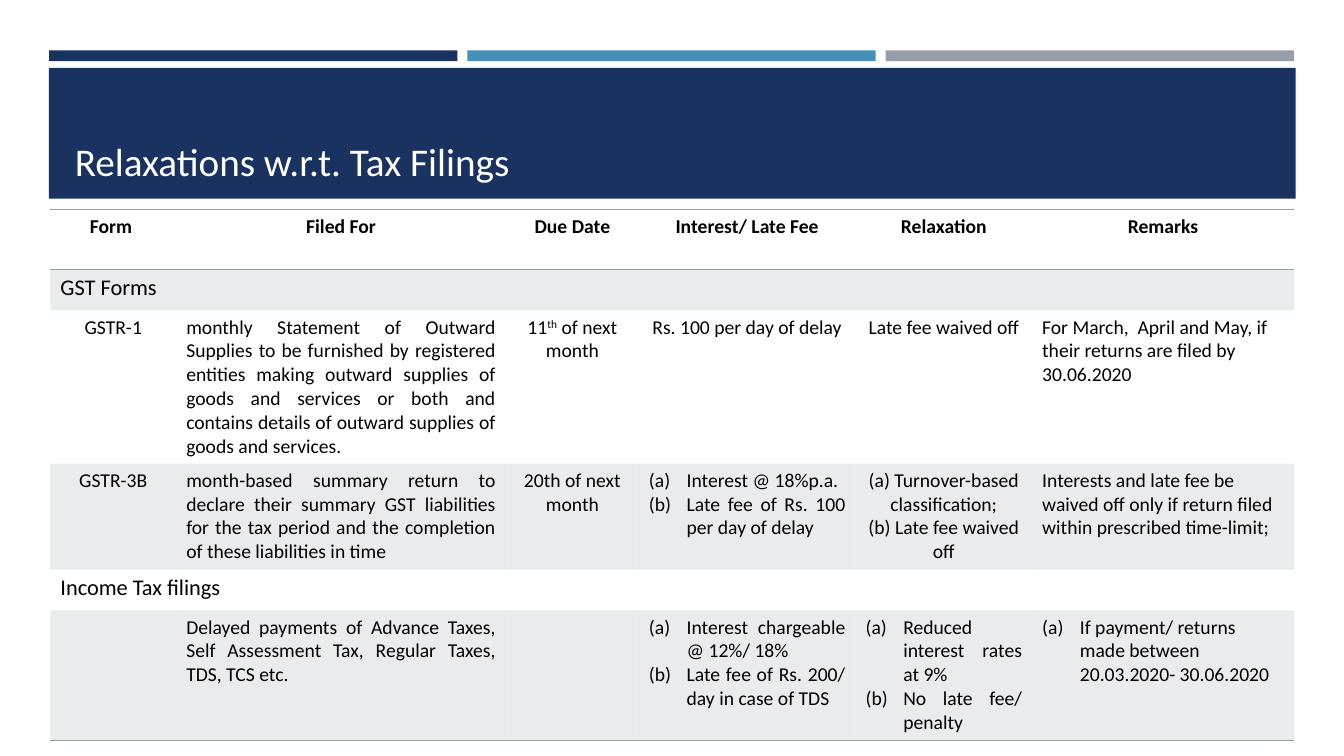
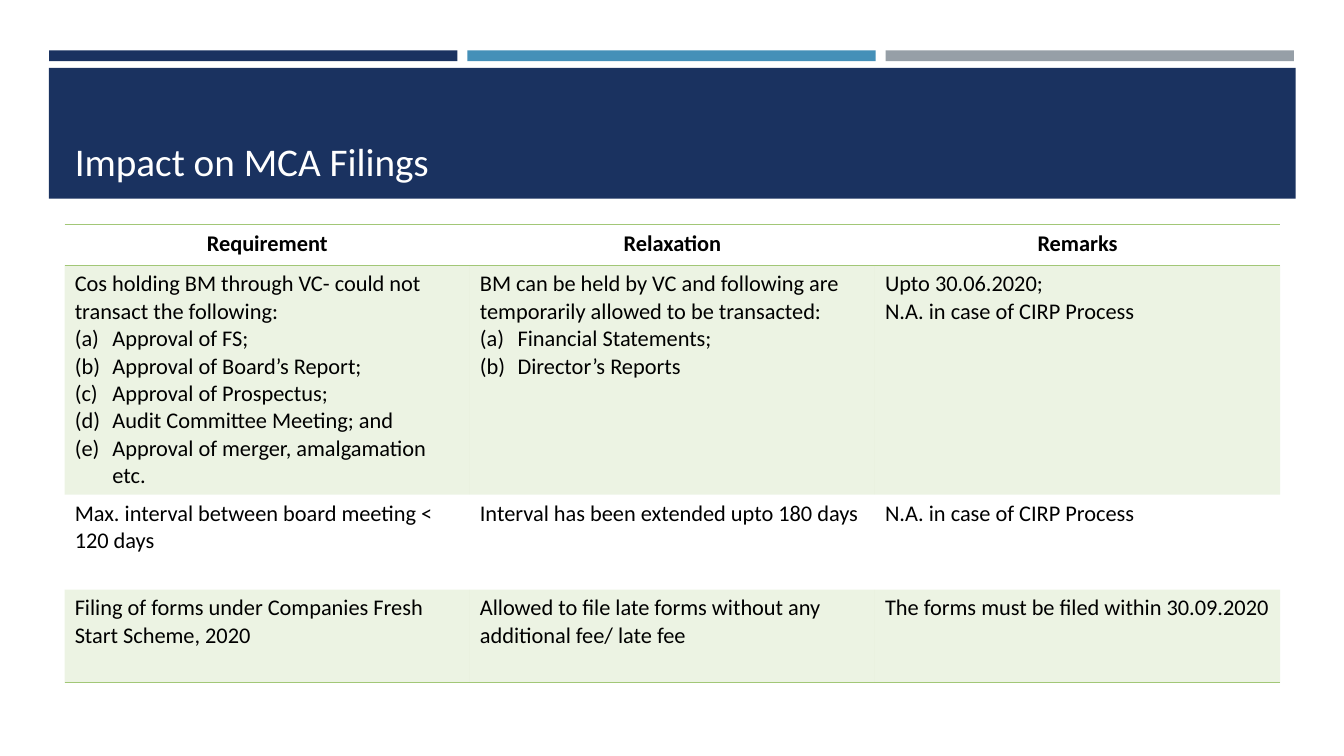
from pptx import Presentation
from pptx.dml.color import RGBColor
from pptx.enum.shapes import MSO_SHAPE
from pptx.enum.text import MSO_ANCHOR, MSO_AUTO_SIZE, PP_ALIGN
from pptx.oxml import parse_xml
from pptx.oxml.ns import nsdecls, qn
from pptx.util import Cm, Pt

NAVY = RGBColor(0x1A, 0x32, 0x60)
BLUE = RGBColor(0x45, 0x90, 0xB8)
GREY = RGBColor(0x96, 0x9F, 0xA7)
GREEN = RGBColor(0xA2, 0xC7, 0x77)
WHITE = RGBColor(0xFF, 0xFF, 0xFF)
BLACK = RGBColor(0, 0, 0)
LEFT, MID, FULL = PP_ALIGN.LEFT, PP_ALIGN.CENTER, PP_ALIGN.JUSTIFY
PLAIN = "{2D5ABB26-0587-4C30-8999-92F81FD0307C}"
ITEM = "# "

TAX = [
    ["Form ", "Filed For", "Due Date", "Interest/ Late Fee", "Relaxation", "Remarks"],
    ["GST Forms"],
    ["GSTR-1",
     "monthly Statement of Outward Supplies to be furnished by registered entities "
     "making outward supplies of goods and services or both and contains details of "
     "outward supplies of goods and services.",
     "11^th^ of next month",
     "Rs. 100 per day of delay",
     "Late fee waived off",
     "For March,  April and May, if their returns are filed by 30.06.2020"],
    ["GSTR-3B",
     "month-based summary return to declare their summary GST liabilities for the "
     "tax period and the completion of these liabilities in time",
     "20th of next month",
     "# Interest @ 18%p.a.\n# Late fee of Rs. 100 per day of delay",
     "(a) Turnover-based classification;\n(b) Late fee waived off",
     "Interests and late fee be waived off only if return filed within prescribed "
     "time-limit;"],
    ["Income Tax filings"],
    ["",
     "Delayed payments of Advance Taxes, Self Assessment Tax, Regular Taxes, TDS, TCS etc.",
     "",
     "# Interest chargeable @ 12%/ 18%\n# Late fee of Rs. 200/ day in case of TDS",
     "# Reduced interest rates at 9% \n# No late fee/ penalty",
     "# If payment/ returns made between 20.03.2020- 30.06.2020"],
]

BOARD = [
    ["Requirement", "Relaxation", "Remarks"],
    ["Cos holding BM through VC- could not transact the following:\n"
     "# Approval of FS;\n# Approval of Board’s Report;\n# Approval of Prospectus;\n"
     "# Audit Committee Meeting; and\n# Approval of merger, amalgamation etc.",
     "BM can be held by VC and following are temporarily allowed to be transacted:\n"
     "# Financial Statements;\n# Director’s Reports",
     "Upto 30.06.2020;\nN.A. in case of CIRP Process"],
    ["Max. interval between board meeting < 120 days",
     "Interval has been extended upto 180 days",
     "N.A. in case of CIRP Process"],
    ["Filing of forms under Companies Fresh Start Scheme, 2020",
     "Allowed to file late forms without any additional fee/ late fee",
     "The forms must be filed within 30.09.2020"],
]


class Deck:
    font = "Calibri"
    head = 28
    group = 16

    def __init__(self):
        self.prs = Presentation()
        self.prs.slide_width, self.prs.slide_height = Cm(33.87), Cm(19.05)
        self.slide = None

    def start(self, title):
        self.slide = self.prs.slides.add_slide(self.prs.slide_layouts[5])
        for i, color in enumerate((NAVY, BLUE, GREY)):
            self.bar(1.24 + i * 10.54, 1.27, 10.29, 0.27, color)
        self.bar(1.23, 1.71, 31.42, 3.3, NAVY)
        self.title(title)

    def bar(self, x, y, w, h, color):
        box = self.slide.shapes.add_shape(MSO_SHAPE.RECTANGLE, Cm(x), Cm(y), Cm(w), Cm(h))
        box.shadow.inherit = False
        box.fill.solid()
        box.fill.fore_color.rgb = color
        box.line.fill.background()

    def title(self, text):
        shape = self.slide.shapes.title
        shape.left, shape.top, shape.width, shape.height = Cm(1.63), Cm(1.96), Cm(30.63), Cm(2.82)
        frame = shape.text_frame
        frame.text = text
        frame.auto_size = MSO_AUTO_SIZE.NONE
        frame.vertical_anchor = MSO_ANCHOR.BOTTOM
        para = frame.paragraphs[0]
        para.alignment = LEFT
        self.style(para.runs[0], self.head, WHITE)
        self.slide.shapes._spTree.append(shape._element)

    def style(self, run, size, color=BLACK, bold=False):
        run.font.name = self.font
        run.font.size = Pt(size)
        run.font.bold = bold
        run.font.color.rgb = color

    def table(self, x, y, cols, rows, data, aligns, size, tint):
        grid = self.slide.shapes.add_table(
            len(rows), len(cols), Cm(x), Cm(y), Cm(sum(cols)), Cm(sum(rows))).table
        grid.first_row = grid.horz_banding = False
        grid._tbl.tblPr.find(qn("a:tableStyleId")).text = PLAIN
        for col, width in zip(grid.columns, cols):
            col.width = Cm(width)
        for r, (row, high, texts) in enumerate(zip(grid.rows, rows, data)):
            row.height = Cm(high)
            top, last, whole = r == 0, r == len(rows) - 1, len(texts) == 1
            for cell in row.cells:
                self.paint(cell, tint, r % 2 == 1)
                if top or last:
                    self.edge(cell, "lnB", tint)
                if top:
                    self.edge(cell, "lnT", tint)
            if whole:
                grid.cell(r, 0).merge(grid.cell(r, len(cols) - 1))
            for cell, text, align in zip(row.cells, texts, aligns):
                if text:
                    side = MID if top else LEFT if whole else align
                    self.label(cell, text, side, self.group if whole else size, top)

    def paint(self, cell, tint, band):
        if not band:
            cell.fill.background()
            return
        cell.fill.solid()
        cell.fill.fore_color.rgb = tint
        color = cell._tc.tcPr.find(".//" + qn("a:srgbClr"))
        color.append(parse_xml(f'<a:alpha {nsdecls("a")} val="20000"/>'))

    def edge(self, cell, side, color):
        cell._tc.get_or_add_tcPr().insert(0, parse_xml(
            f'<a:{side} {nsdecls("a")} w="12700"><a:solidFill>'
            f'<a:srgbClr val="{color}"/></a:solidFill></a:{side}>'))

    def label(self, cell, text, align, size, bold):
        frame = cell.text_frame
        frame.text = text.replace(ITEM, "").replace("^", "")
        for para, line in zip(frame.paragraphs, text.split("\n")):
            item = line.startswith(ITEM)
            para.alignment = FULL if item and align != LEFT else align
            if item:
                self.number(para)
            parts = line.removeprefix(ITEM).split("^")
            para.runs[0].text = parts[0]
            for part in parts[1:]:
                para.add_run().text = part
            for i, run in enumerate(para.runs):
                self.style(run, size, bold=bold)
                if i % 2:
                    run._r.get_or_add_rPr().set("baseline", "30000")

    def number(self, para):
        props = para._p.get_or_add_pPr()
        props.set("marL", str(Cm(0.95)))
        props.set("indent", str(-Cm(0.95)))
        props.append(parse_xml(f'<a:buAutoNum {nsdecls("a")} type="alphaLcParenBoth"/>'))


def main():
    deck = Deck()
    deck.start("Relaxations w.r.t. Tax Filings")
    deck.table(1.27, 5.28, [3.17, 8.31, 3.35, 5.46, 4.45, 6.6],
               [1.51, 1.03, 3.86, 2.67, 1.03, 3.27], TAX,
               [MID, FULL, MID, MID, MID, LEFT], 14, GREY)
    deck.start("Impact on MCA Filings")
    deck.table(1.63, 5.66, [10.21] * 3, [1.03, 5.77, 2.39, 2.35], BOARD,
               [LEFT] * 3, 16, GREEN)
    deck.prs.save("out.pptx")


if __name__ == "__main__":
    main()
